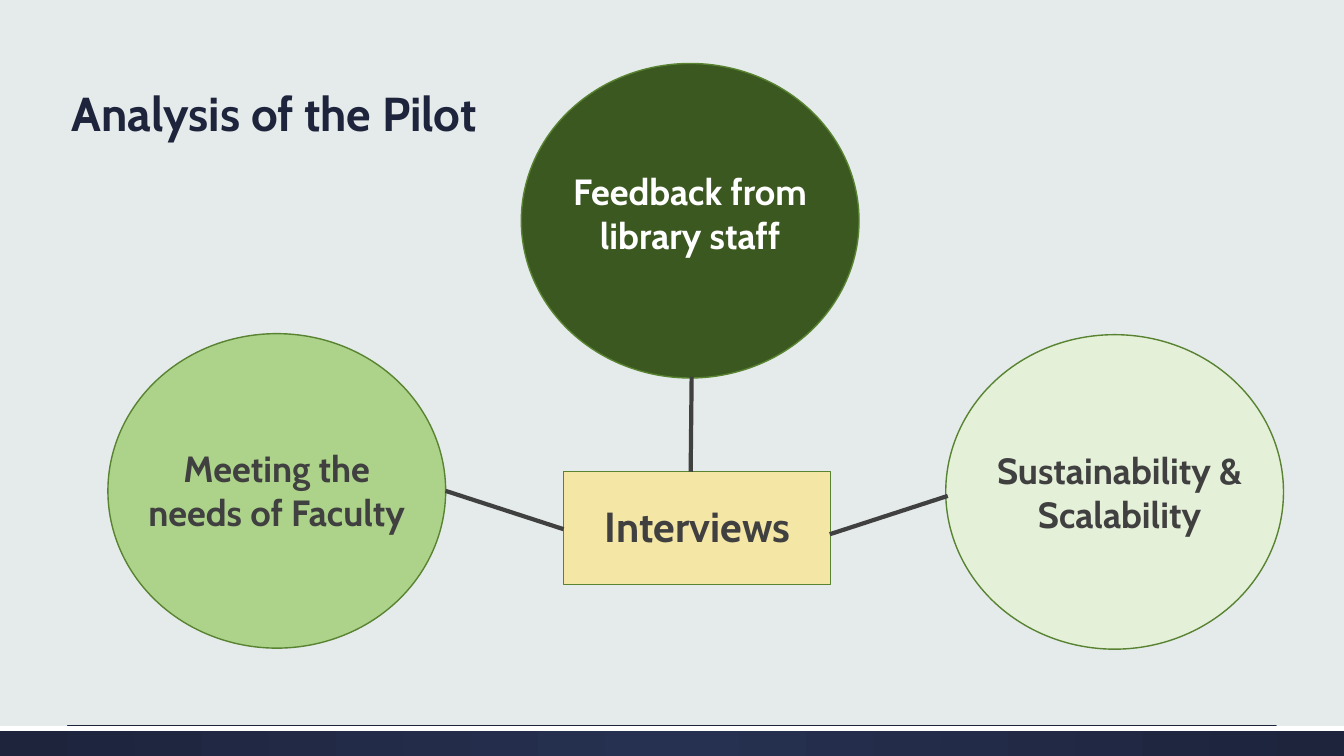
from lxml import etree
from pptx import Presentation
from pptx.dml.color import RGBColor
from pptx.enum.shapes import MSO_CONNECTOR, MSO_SHAPE
from pptx.enum.text import MSO_ANCHOR, MSO_AUTO_SIZE, PP_ALIGN
from pptx.oxml import parse_xml
from pptx.oxml.ns import nsdecls, qn
from pptx.util import Inches, Pt

RECT, ELLIPSE = MSO_SHAPE.RECTANGLE, MSO_SHAPE.OVAL
STRAIGHT = MSO_CONNECTOR.STRAIGHT
LEFT, CENTER = PP_ALIGN.LEFT, PP_ALIGN.CENTER
BOTTOM = MSO_ANCHOR.BOTTOM
NO_FIT, GROW = MSO_AUTO_SIZE.NONE, MSO_AUTO_SIZE.SHAPE_TO_FIT_TEXT

FONT = "Cabin"
BACKGROUND = RGBColor(0xE5, 0xEA, 0xEA)
NAVY = RGBColor(0x1D, 0x24, 0x3C)
NAVY_LIGHT = RGBColor(0x26, 0x30, 0x50)
WHITE = RGBColor(0xFF, 0xFF, 0xFF)
GRAY = RGBColor(0x40, 0x40, 0x40)
OUTLINE = RGBColor(0x58, 0x83, 0x31)
GREEN_DARK = RGBColor(0x3C, 0x58, 0x21)
GREEN_MID = RGBColor(0xAD, 0xD3, 0x8A)
GREEN_PALE = RGBColor(0xE4, 0xF0, 0xD8)
YELLOW = RGBColor(0xF4, 0xE6, 0xA5)

CIRCLE_SIZE = (3.35, 3.12)
LABEL_SIZE = (2.79, 0.98)

# circle position, fill, label position, label, label colour
TOPICS = [
    ((1.07, 3.31), GREEN_MID, (1.35, 4.38), "Meeting the needs of Faculty", GRAY),
    ((5.17, 0.63), GREEN_DARK, (5.45, 1.63), "Feedback from library staff", WHITE),
    ((9.38, 3.32), GREEN_PALE, (9.71, 4.4), "Sustainability & Scalability", GRAY),
]
SPOKES = [
    ((4.42, 4.87), (5.59, 5.25)),
    ((9.4, 4.92), (8.23, 5.3)),
    ((6.86, 3.74), (6.85, 4.68)),
]


def inches(*values):
    return [Inches(v) for v in values]


def set_font(p, size, color):
    p.font.name = FONT
    p.font.size = Pt(size)
    p.font.bold = True
    p.font.color.rgb = color


def add_shape(slide, kind, box, fill, line=None):
    sp = slide.shapes.add_shape(kind, *inches(*box))
    sp.shadow.inherit = False
    sp.fill.solid()
    sp.fill.fore_color.rgb = fill
    if line is None:
        sp.line.fill.background()
    else:
        sp.line.color.rgb = line
        sp.line.width = Pt(1)
    return sp


def add_label(slide, box, text, size, color):
    tf = slide.shapes.add_textbox(*inches(*box)).text_frame
    tf.word_wrap = True
    tf.auto_size = GROW
    p = tf.paragraphs[0]
    p.text = text
    p.alignment = CENTER
    set_font(p, size, color)


def add_line(slide, start, end, color, width):
    line = slide.shapes.add_connector(STRAIGHT, *inches(*start, *end))
    line.line.color.rgb = color
    line.line.width = Pt(width)
    etree.SubElement(line._element.spPr, qn("a:effectLst"))


def make_radial(sp, inner, outer):
    """Fill the shape with a gradient running from its centre outwards."""
    sp.fill.gradient()
    for stop, color, position in zip(sp.fill.gradient_stops, (inner, outer), (0, 1)):
        stop.color.rgb = color
        stop.position = position
    grad = sp._element.spPr.find(qn("a:gradFill"))
    radial = parse_xml(
        f'<a:path {nsdecls("a")} path="circle">'
        '<a:fillToRect l="50000" t="50000" r="50000" b="50000"/></a:path>'
    )
    grad.replace(grad.find(qn("a:lin")), radial)


def add_footer(slide):
    band = add_shape(slide, RECT, (0, 7.2, 13.33, 0.3), NAVY)
    make_radial(band, NAVY_LIGHT, NAVY)
    add_shape(slide, RECT, (0, 7.2, 13.33, 0.05), WHITE)
    add_line(slide, (0.67, 7.2), (12.66, 7.2), NAVY, 0.5)


def set_title(slide, text):
    title = slide.shapes.title
    title.left, title.top, title.width, title.height = inches(0.61, 0.59, 4.56, 0.87)
    tf = title.text_frame
    tf.word_wrap = True
    tf.auto_size = NO_FIT
    tf.vertical_anchor = BOTTOM
    p = tf.paragraphs[0]
    p.text = text
    p.alignment = LEFT
    p.line_spacing = 0.9
    set_font(p, 34, NAVY)


def main():
    prs = Presentation()
    prs.slide_width, prs.slide_height = inches(13.33, 7.5)
    slide = prs.slides.add_slide(prs.slide_layouts[5])
    slide.background.fill.solid()
    slide.background.fill.fore_color.rgb = BACKGROUND

    add_footer(slide)
    set_title(slide, "Analysis of the Pilot")
    for circle_at, fill, label_at, text, color in TOPICS:
        add_shape(slide, ELLIPSE, circle_at + CIRCLE_SIZE, fill, OUTLINE)
        add_label(slide, label_at + LABEL_SIZE, text, 26, color)
    add_shape(slide, RECT, (5.59, 4.68, 2.65, 1.12), YELLOW, OUTLINE)
    add_label(slide, (5.81, 4.92, 2.22, 0.61), "Interviews", 30, GRAY)
    for start, end in SPOKES:
        add_line(slide, start, end, GRAY, 3)

    prs.save("out.pptx")


if __name__ == "__main__":
    main()
